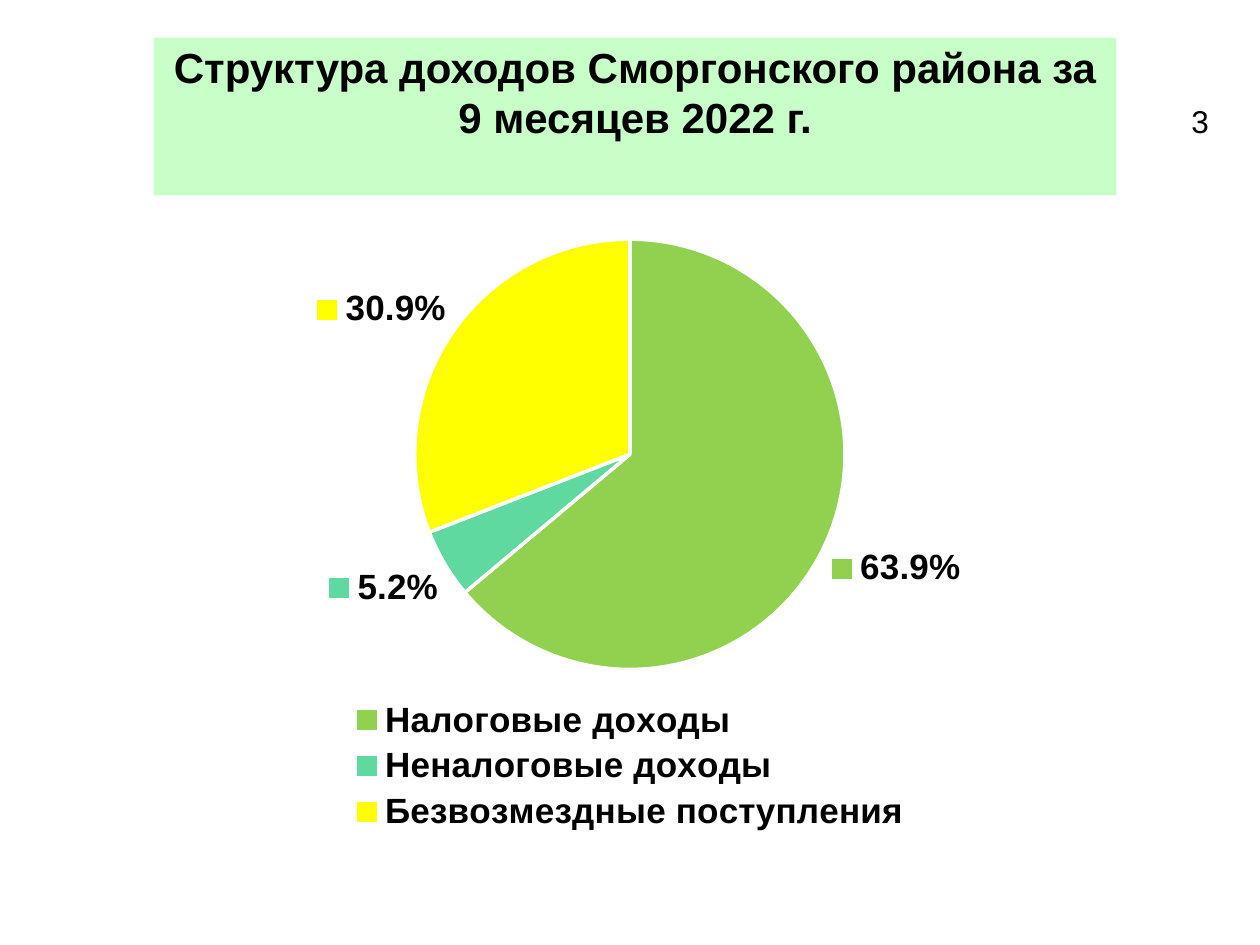
from dataclasses import dataclass

from lxml import etree
from pptx import Presentation
from pptx.chart.data import CategoryChartData
from pptx.dml.color import RGBColor
from pptx.enum.chart import XL_CHART_TYPE, XL_LABEL_POSITION, XL_LEGEND_POSITION
from pptx.enum.text import MSO_ANCHOR, PP_ALIGN
from pptx.oxml.ns import qn
from pptx.util import Inches, Pt

PIE = XL_CHART_TYPE.PIE
OUTSIDE = XL_LABEL_POSITION.OUTSIDE_END
BOTTOM = XL_LEGEND_POSITION.BOTTOM
TOP = MSO_ANCHOR.TOP
CENTER = PP_ALIGN.CENTER


@dataclass(frozen=True)
class Theme:
    font: str = "Arial"
    ink: str = "000000"
    paper: str = "FFFFFF"
    band: str = "C8FFC8"
    slices: tuple = ("92D050", "5FD99F", "FFFF00")
    title_size: int = 24
    chart_size: int = 20
    number_size: int = 18


class Deck:
    """Holds the theme and the current slide; places items on a 20 x 15 grid."""

    COLS, ROWS = 20, 15

    def __init__(self, theme):
        self.theme = theme
        self.prs = Presentation()
        self.prs.slide_width, self.prs.slide_height = Inches(10), Inches(7.5)
        self.s = self.prs.slides.add_slide(self.prs.slide_layouts[5])

    def box(self, col, row, cols, rows):
        dx = self.prs.slide_width / self.COLS
        dy = self.prs.slide_height / self.ROWS
        return int(col * dx), int(row * dy), int(cols * dx), int(rows * dy)

    def style(self, font, size, bold=False):
        font.name, font.size, font.bold = self.theme.font, Pt(size), bold
        font.color.rgb = RGBColor.from_string(self.theme.ink)

    def fill_text(self, tf, text, size, bold=False):
        tf.word_wrap = True
        tf.vertical_anchor = TOP
        p = tf.paragraphs[0]
        p.alignment = CENTER
        r = p.add_run()
        r.text = text
        self.style(r.font, size, bold)

    def title(self, text, *cell):
        sp = self.s.shapes.title
        sp.left, sp.top, sp.width, sp.height = self.box(*cell)
        sp.fill.solid()
        sp.fill.fore_color.rgb = RGBColor.from_string(self.theme.band)
        sp.text_frame.margin_top = Inches(0.03)
        self.fill_text(sp.text_frame, text, self.theme.title_size, True)

    def text(self, text, size, *cell):
        sp = self.s.shapes.add_textbox(*self.box(*cell))
        self.fill_text(sp.text_frame, text, size)

    @staticmethod
    def manual_layout(parent, index, inner=False, **shares):
        """Fix a chart part's place, in shares of the chart's size."""
        for old in parent.findall(qn("c:layout")):
            parent.remove(old)
        layout = etree.Element(qn("c:layout"))
        manual = etree.SubElement(layout, qn("c:manualLayout"))
        settings = {"layoutTarget": "inner"} if inner else {}
        settings.update(xMode="edge", yMode="edge", **shares)
        for name, value in settings.items():
            etree.SubElement(manual, qn("c:" + name)).set("val", str(value))
        parent.insert(index, layout)

    def pie(self, values, *cell):
        size = self.theme.chart_size
        data = CategoryChartData(number_format="0.0%")
        data.categories = list(values)
        data.add_series("Series 1", list(values.values()))
        chart = self.s.shapes.add_chart(PIE, *self.box(*cell), data).chart
        chart.has_title = False
        self.style(chart.font, size, True)

        # Slices with white edges
        plot = chart.plots[0]
        plot.vary_by_categories = True
        series = plot.series[0]
        for i, color in enumerate(self.theme.slices):
            fmt = series.points[i].format
            fmt.fill.solid()
            fmt.fill.fore_color.rgb = RGBColor.from_string(color)
            fmt.line.color.rgb = RGBColor.from_string(self.theme.paper)
            fmt.line.width = Pt(2)

        # Value labels with their colour keys
        labels = series.data_labels
        labels.show_value = labels.show_legend_key = True
        labels.show_percentage = False
        labels.number_format = "0.0%"
        labels.number_format_is_linked = False
        labels.position = OUTSIDE
        self.style(labels.font, size, True)

        # Legend stacked under the pie
        chart.has_legend = True
        legend = chart.legend
        legend.position = BOTTOM
        legend.include_in_layout = False
        self.style(legend.font, size, True)

        space = chart.element if hasattr(chart, "element") else chart._chartSpace
        self.manual_layout(space.find(".//" + qn("c:plotArea")), 0, True,
                           x=0.31, y=0.03, w=0.38, h=0.69)
        self.manual_layout(space.find(".//" + qn("c:legend")), 1,
                           x=0.25, y=0.76, w=0.5, h=0.23)


def main():
    theme = Theme()
    deck = Deck(theme)

    # Heading and slide number
    deck.title("Структура доходов Сморгонского района за 9 месяцев 2022 г.",
               2.44, 0.6, 15.28, 2.5)
    deck.text("3", theme.number_size, 18.5, 1.52, 1.1, 0.8)

    # Revenue shares
    deck.pie({"Налоговые доходы": 0.639,
              "Неналоговые доходы": 0.052,
              "Безвозмездные поступления": 0.309}, 1, 3.5, 18, 9.9)

    deck.prs.save("out.pptx")


if __name__ == "__main__":
    main()
